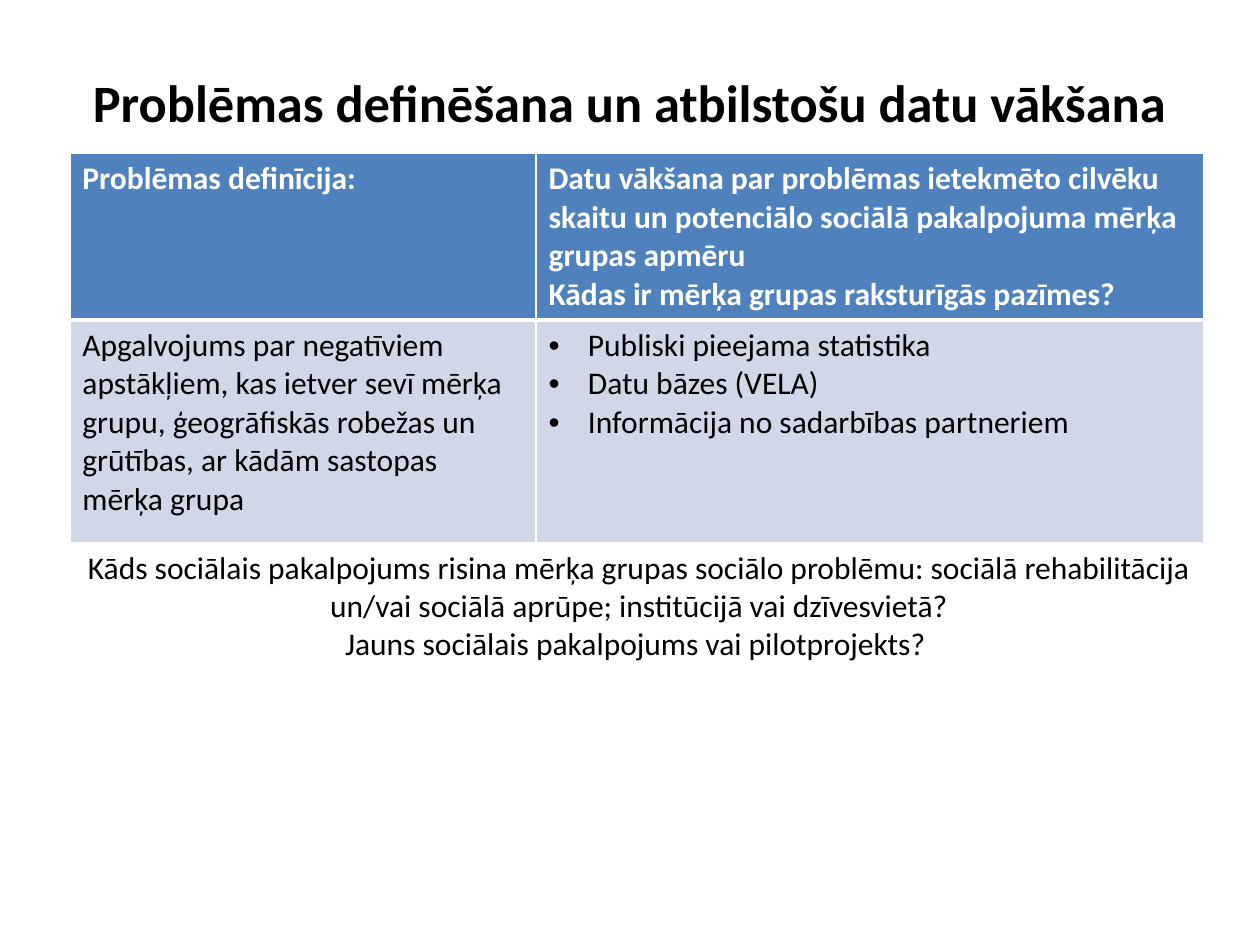
from lxml.etree import SubElement
from pptx import Presentation
from pptx.dml.color import RGBColor
from pptx.enum.text import MSO_ANCHOR, MSO_AUTO_SIZE, PP_ALIGN
from pptx.oxml.ns import qn
from pptx.util import Pt

TITLE = "Problēmas definēšana un atbilstošu datu vākšana"
TABLE_ROWS = [
    [
        ["Problēmas definīcija:"],
        [
            "Datu vākšana par problēmas ietekmēto cilvēku skaitu un potenciālo "
            "sociālā pakalpojuma mērķa grupas apmēru",
            "Kādas ir mērķa grupas raksturīgās pazīmes?",
        ],
    ],
    [
        [
            "Apgalvojums par negatīviem apstākļiem, kas ietver sevī mērķa grupu, "
            "ģeogrāfiskās robežas un grūtības, ar kādām sastopas mērķa grupa"
        ],
        [
            "Publiski pieejama statistika",
            "Datu bāzes (VELA)",
            "Informācija no sadarbības partneriem",
        ],
    ],
]
QUESTIONS = [
    "Kāds sociālais pakalpojums risina mērķa grupas sociālo problēmu: sociālā "
    "rehabilitācija un/vai sociālā aprūpe; institūcijā vai dzīvesvietā?",
    "Jauns sociālais pakalpojums vai pilotprojekts? ",
]
ROW_STYLES = [
    {"fill": "4F81BD", "color": "FFFFFF", "bold": True, "borders": (1, 1, 1, 3)},
    {"fill": "D0D8E8", "color": "000000", "bold": False, "borders": (1, 1, 3, 1)},
]
COLUMN_WIDTHS = [266.4, 381.6]
ROW_HEIGHTS = [89.3, 127.4]
BULLET_INDENT = 22.5


def rgb(color):
    return RGBColor.from_string(color)


def write(text_frame, lines, size=18, color="000000", bold=False, align=PP_ALIGN.LEFT, bullets=False):
    text_frame.word_wrap = True
    for index, line in enumerate(lines):
        paragraph = text_frame.paragraphs[0] if index == 0 else text_frame.add_paragraph()
        paragraph.alignment = align
        run = paragraph.add_run()
        run.text = line
        run.font.name = "Calibri"
        run.font.size = Pt(size)
        run.font.bold = bold
        run.font.color.rgb = rgb(color)
        if bullets:
            properties = paragraph._p.get_or_add_pPr()
            properties.set("marL", str(Pt(BULLET_INDENT)))
            properties.set("indent", str(-Pt(BULLET_INDENT)))
            SubElement(properties, qn("a:buFont"), typeface="Arial")
            SubElement(properties, qn("a:buChar"), char="•")


def style_cell(cell, fill, borders):
    properties = cell._tc.get_or_add_tcPr()
    for side, width in zip(("lnL", "lnR", "lnT", "lnB"), borders):
        line = SubElement(properties, qn(f"a:{side}"), w=str(Pt(width)))
        SubElement(SubElement(line, qn("a:solidFill")), qn("a:srgbClr"), val="FFFFFF")
    cell.fill.solid()
    cell.fill.fore_color.rgb = rgb(fill)


def main():
    presentation = Presentation()
    presentation.slide_width, presentation.slide_height = Pt(720), Pt(540)
    slide = presentation.slides.add_slide(presentation.slide_layouts[5])

    title = slide.shapes.title
    title.left, title.top, title.width, title.height = Pt(36), Pt(21.6), Pt(648), Pt(72.7)
    title.text_frame.vertical_anchor = MSO_ANCHOR.MIDDLE
    write(title.text_frame, [TITLE], size=30, bold=True, align=PP_ALIGN.CENTER)

    table = slide.shapes.add_table(
        len(ROW_HEIGHTS), len(COLUMN_WIDTHS), Pt(39.9), Pt(87.8),
        Pt(sum(COLUMN_WIDTHS)), Pt(sum(ROW_HEIGHTS)),
    ).table
    for column, width in zip(table.columns, COLUMN_WIDTHS):
        column.width = Pt(width)
    for row, height, contents, style in zip(table.rows, ROW_HEIGHTS, TABLE_ROWS, ROW_STYLES):
        row.height = Pt(height)
        for cell, lines in zip(row.cells, contents):
            style_cell(cell, style["fill"], style["borders"])
            write(cell.text_frame, lines, color=style["color"], bold=style["bold"],
                  bullets=lines is TABLE_ROWS[1][1])

    questions = slide.shapes.add_textbox(Pt(41.8), Pt(309.6), Pt(646.6), Pt(72.7))
    write(questions.text_frame, QUESTIONS, align=PP_ALIGN.CENTER)
    questions.text_frame.auto_size = MSO_AUTO_SIZE.SHAPE_TO_FIT_TEXT

    presentation.save("out.pptx")


if __name__ == "__main__":
    main()
